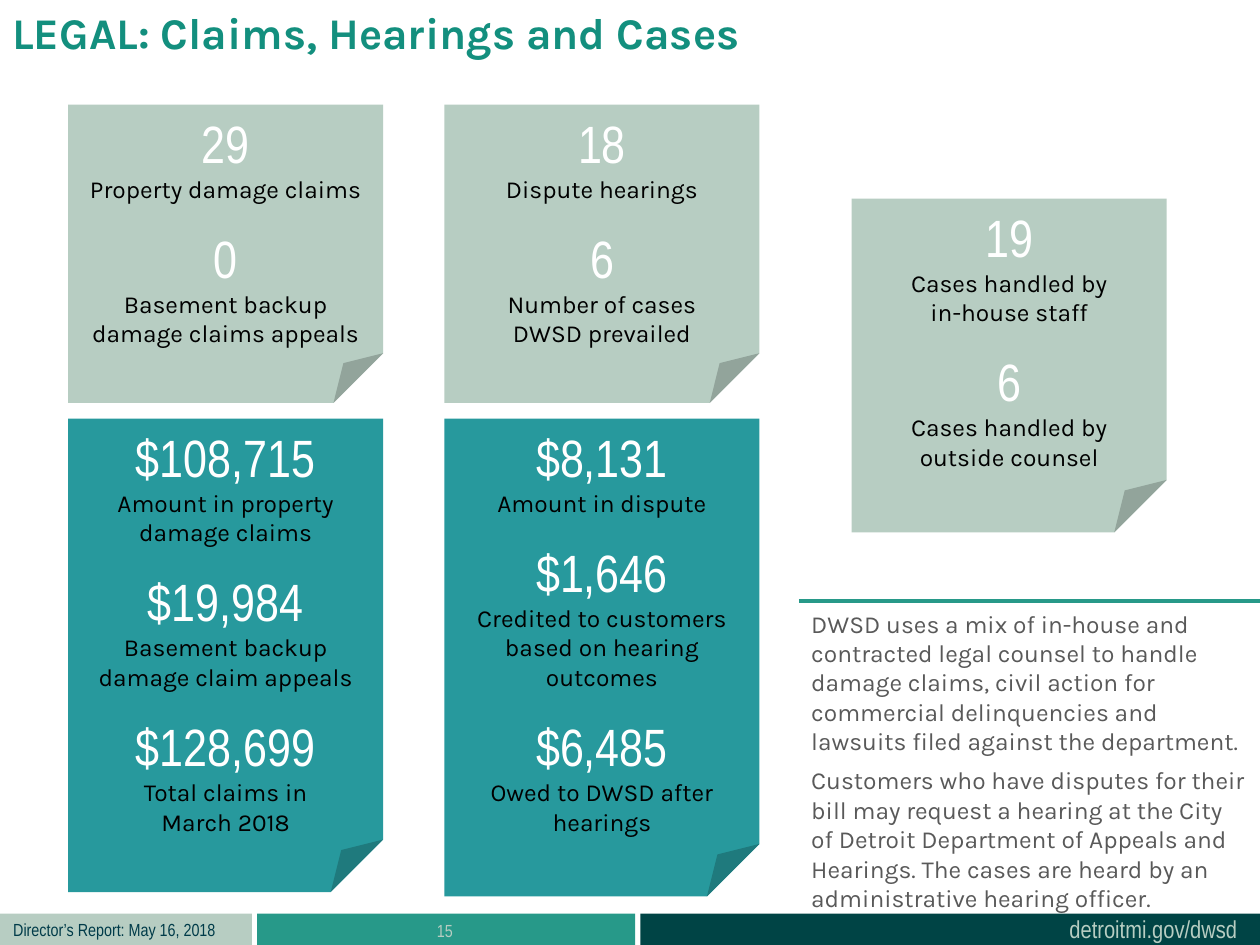
from collections import namedtuple

from lxml import etree
from pptx import Presentation
from pptx.dml.color import RGBColor
from pptx.enum import shapes, text
from pptx.oxml import ns
from pptx.util import Pt

SAGE = RGBColor(0xB7, 0xCD, 0xC2)
TEAL = RGBColor(0x27, 0x99, 0x9D)
GREEN = RGBColor(0x27, 0x99, 0x89)
TITLE_GREEN = RGBColor(0x13, 0x8F, 0x7E)
DARK_GREEN = RGBColor(0x00, 0x44, 0x45)
NAVY = RGBColor(0x00, 0x3B, 0x49)
GREY = RGBColor(0x59, 0x59, 0x59)
BLACK = RGBColor(0, 0, 0)
WHITE = RGBColor(0xFF, 0xFF, 0xFF)
NARROW, KARLA = "Arial Narrow", "Karla"

Box = namedtuple("Box", "left top width height")

CARD_WIDTH = 180
CLAIMS_LEFT, HEARINGS_LEFT, CASES_LEFT = 39, 254, 486.75
COUNTS_TOP, AMOUNTS_TOP = 59.75, 239.25

CARDS = [
    (Box(CLAIMS_LEFT, COUNTS_TOP, CARD_WIDTH, 170.5), SAGE, [
        ("29", "Property damage claims"),
        ("0", "Basement backup\ndamage claims appeals")]),
    (Box(CLAIMS_LEFT, AMOUNTS_TOP, CARD_WIDTH, 270.5), TEAL, [
        ("$108,715", "Amount in property\ndamage claims"),
        ("$19,984", "Basement backup damage claim appeals"),
        ("$128,699", "Total claims in\nMarch 2018")]),
    (Box(HEARINGS_LEFT, COUNTS_TOP, CARD_WIDTH, 170.5), SAGE, [
        ("18", "Dispute hearings"),
        ("6", "Number of cases\nDWSD prevailed")]),
    (Box(HEARINGS_LEFT, AMOUNTS_TOP, CARD_WIDTH, 273), TEAL, [
        ("$8,131", "Amount in dispute"),
        ("$1,646", "Credited to customers based on hearing outcomes"),
        ("$6,485", "Owed to DWSD after hearings")]),
    (Box(CASES_LEFT, 113.5, CARD_WIDTH, 190.75), SAGE, [
        ("19", "Cases handled by\nin-house staff"),
        ("6", "Cases handled by\noutside counsel")]),
]

NOTES = [
    "DWSD uses a mix of in-house and contracted legal counsel to handle damage claims, "
    "civil action for commercial delinquencies and lawsuits filed against the department.",
    "Customers who have disputes for their bill may request a hearing at the City of Detroit "
    "Department of Appeals and Hearings. The cases are heard by an administrative hearing officer.",
]


def write(para, words, font, size, color, bold=False, align=text.PP_ALIGN.LEFT):
    """Fill one paragraph and format its runs."""
    para.text = words
    para.alignment = align
    for span in para.runs:
        span.font.name = font
        span.font.size = Pt(size)
        span.font.bold = bold
        span.font.color.rgb = color


def add_text(page, box, words, font, size, color, wrap=True, **style):
    """Place a text box holding one paragraph."""
    frame = page.shapes.add_textbox(*map(Pt, box)).text_frame
    frame.word_wrap = wrap
    write(frame.paragraphs[0], words, font, size, color, **style)


def add_filled(page, kind, box, color):
    """Place a plain filled shape without outline or shadow."""
    shape = page.shapes.add_shape(kind, *map(Pt, box))
    shape.shadow.inherit = False
    shape.fill.solid()
    shape.fill.fore_color.rgb = color
    shape.line.fill.background()
    return shape


def add_card(page, box, color, figures):
    """Place a folded card listing figures with their labels."""
    card = add_filled(page, shapes.MSO_SHAPE.FOLDED_CORNER, box, color)
    frame = card.text_frame
    frame.word_wrap = True
    frame.vertical_anchor = text.MSO_ANCHOR.TOP
    for index, (number, label) in enumerate(figures):
        para = frame.add_paragraph() if index else frame.paragraphs[0]
        write(para, number, NARROW, 30, WHITE, align=text.PP_ALIGN.CENTER)
        if index:
            para.space_before = Pt(13)
        write(frame.add_paragraph(), label, KARLA, 14, BLACK, align=text.PP_ALIGN.CENTER)


def add_notes(page, box):
    """Place the ruled explanatory notes in equal rows."""
    rule = page.shapes.add_connector(
        shapes.MSO_CONNECTOR.STRAIGHT,
        Pt(box.left), Pt(box.top), Pt(box.left + box.width), Pt(box.top))
    rule.line.color.rgb = GREEN
    rule.line.width = Pt(2.25)
    etree.SubElement(rule._element.spPr, ns.qn("a:effectLst"))
    row = box.height / len(NOTES)
    for index, note in enumerate(NOTES):
        place = Box(box.left, box.top + 0.75 + index * row, box.width, row)
        add_text(page, place, note, KARLA, 14, GREY)


def add_footer(page, box):
    """Place the three footer bands and their texts."""
    left, top, width, height = box
    for start, end, color in [(0, 144, SAGE), (147, 363, GREEN), (366, width, DARK_GREEN)]:
        band = Box(left + start, top, end - start, height)
        add_filled(page, shapes.MSO_SHAPE.RECTANGLE, band, color)
    add_text(page, Box(left + 0.5, top - 0.5, 130.5, 19.5), "Director’s Report: May 16, 2018",
             NARROW, 10, NAVY, wrap=False)
    add_text(page, Box(left + 146.25, top, 216, 28.75), "15", NARROW, 10, SAGE,
             align=text.PP_ALIGN.CENTER)
    add_text(page, Box(left + 604, top - 3.5, 111.5, 24.5), "detroitmi.gov/dwsd",
             NARROW, 14, SAGE, wrap=False)


def build_legal_page(page, box):
    """Lay out the legal claims, hearings and cases page."""
    add_footer(page, Box(box.left, box.top + box.height - 18, box.width, 18))
    for place, color, figures in CARDS:
        add_card(page, place, color, figures)
    add_notes(page, Box(456.5, 343.5, box.width - 456.5, 179))
    add_text(page, Box(box.left, box.top, 546.5, 55.5), "LEGAL: Claims, Hearings and Cases",
             KARLA, 25, TITLE_GREEN, bold=True)


def main():
    """Build and save the deck."""
    deck = Presentation()
    deck.slide_width, deck.slide_height = Pt(720), Pt(540)
    page = deck.slides.add_slide(deck.slide_layouts[6])
    build_legal_page(page, Box(0, 0, 720, 540))
    deck.save("out.pptx")


if __name__ == "__main__":
    main()
